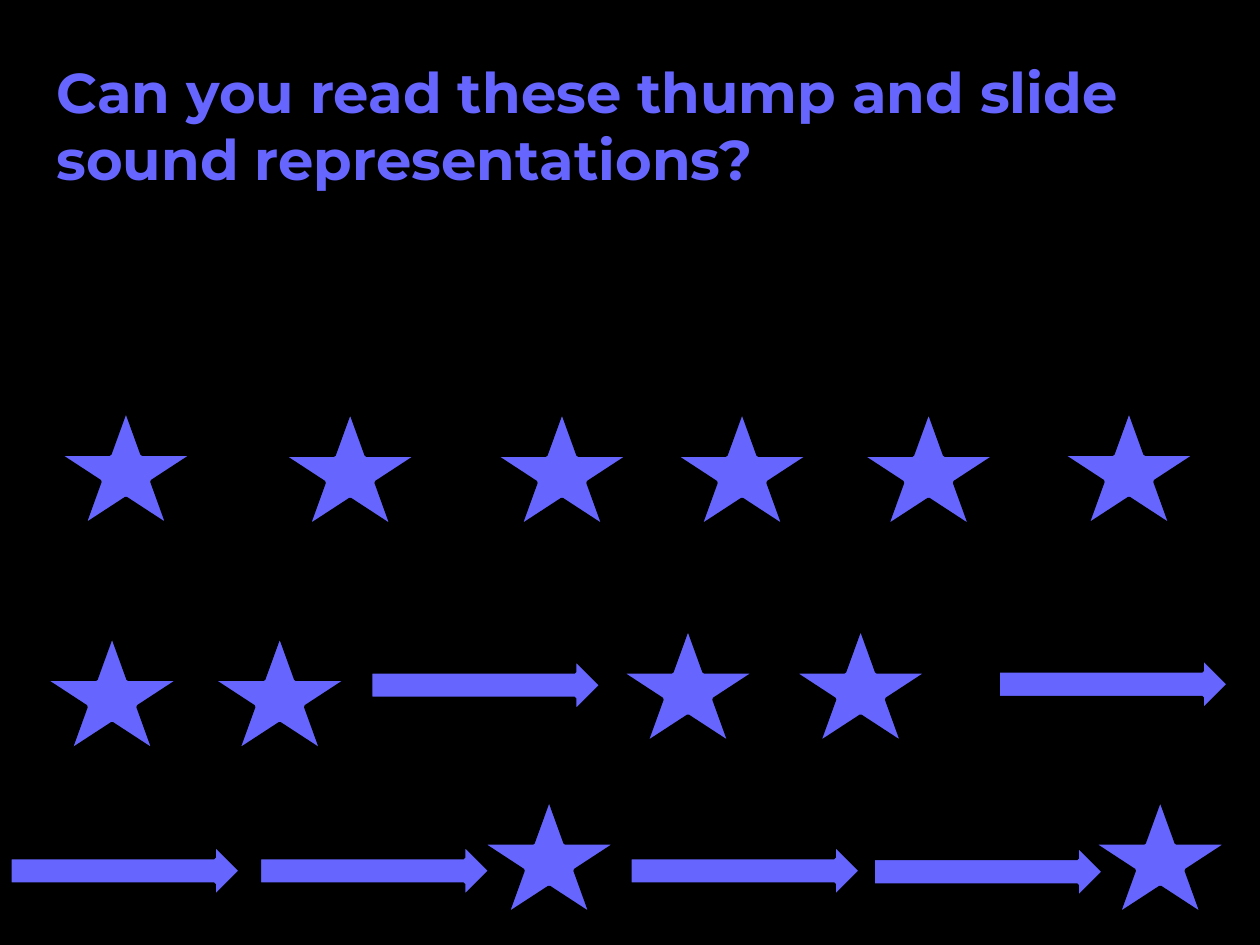
from pptx import Presentation
from pptx.dml.color import RGBColor
from pptx.enum.shapes import MSO_SHAPE as Shape
from pptx.enum.text import MSO_AUTO_SIZE as AutoSize
from pptx.util import Cm, Pt

# Content: each sound is (kind, left, top) in cm, one list per row
TITLE = "Can you read these thump and slide sound representations?"
FONT = "Montserrat"
COLORS = {"background": "000000", "accent": "6666FF"}
SOUNDS = {
    "thump": (Shape.STAR_5_POINT, 2.74, 2.34),
    "slide": (Shape.RIGHT_ARROW, 4.65, 1.07),
}
ROWS = [
    [("thump", 1.17, 8.26), ("thump", 5.69, 8.28), ("thump", 9.96, 8.28),
     ("thump", 13.59, 8.28), ("thump", 17.35, 8.28), ("thump", 21.39, 8.26)],
    [("thump", 0.89, 12.8), ("thump", 4.27, 12.8), ("slide", 7.47, 13.28),
     ("thump", 12.5, 12.65), ("thump", 15.98, 12.65), ("slide", 20.12, 13.26)],
    [("slide", 0.2, 17.02), ("slide", 5.23, 17.02), ("thump", 9.7, 16.1),
     ("slide", 12.7, 17.02), ("slide", 17.6, 17.04), ("thump", 22.02, 16.1)],
]


def color(name):
    return RGBColor.from_string(COLORS[name])


def add_title(slide):
    box = slide.shapes.add_textbox(Cm(0.89), Cm(1.04), Cm(23.5), Cm(3))
    frame = box.text_frame
    frame.word_wrap = True
    frame.auto_size = AutoSize.SHAPE_TO_FIT_TEXT
    run = frame.paragraphs[0].add_run()
    run.text = TITLE
    run.font.name = FONT
    run.font.size = Pt(32)
    run.font.bold = True
    run.font.color.rgb = color("accent")


def add_sound(slide, kind, left, top):
    preset, width, height = SOUNDS[kind]
    shape = slide.shapes.add_shape(preset, Cm(left), Cm(top), Cm(width), Cm(height))
    shape.shadow.inherit = False
    shape.fill.solid()
    shape.fill.fore_color.rgb = color("accent")
    shape.line.color.rgb = color("background")
    shape.line.width = Pt(2)


def main():
    presentation = Presentation()
    presentation.slide_width, presentation.slide_height = Cm(25.4), Cm(19.05)
    slide = presentation.slides.add_slide(presentation.slide_layouts[6])

    # Background and title
    slide.background.fill.solid()
    slide.background.fill.fore_color.rgb = color("background")
    add_title(slide)

    # Rows of sounds
    for row in ROWS:
        for kind, left, top in row:
            add_sound(slide, kind, left, top)

    presentation.save("out.pptx")


if __name__ == "__main__":
    main()
